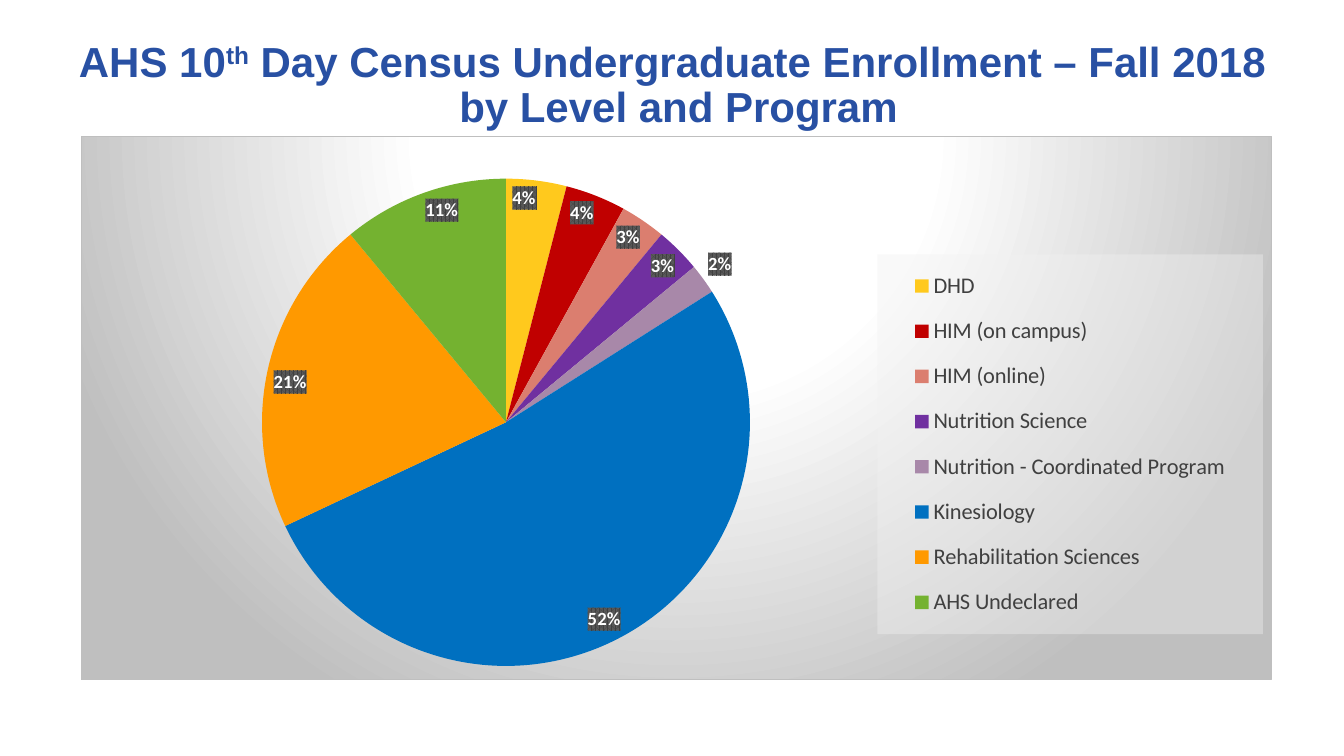
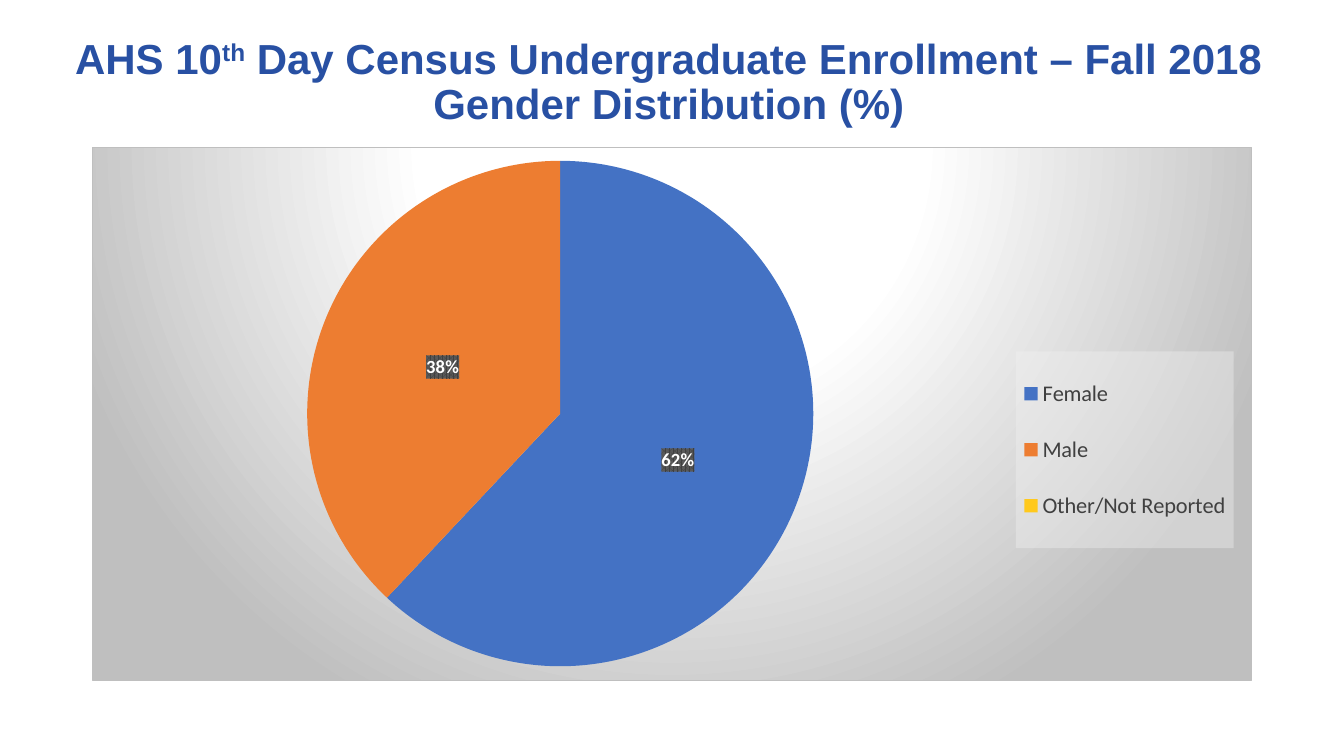
from dataclasses import dataclass

from pptx import Presentation
from pptx.chart.chart import Chart
from pptx.chart.data import CategoryChartData
from pptx.dml.color import RGBColor
from pptx.enum.chart import XL_CHART_TYPE, XL_LABEL_POSITION, XL_LEGEND_POSITION
from pptx.enum.text import MSO_ANCHOR, MSO_AUTO_SIZE, PP_ALIGN
from pptx.oxml import parse_xml
from pptx.oxml.ns import nsdecls
from pptx.slide import Slide
from pptx.util import Inches, Pt

SLIDE_WIDTH = Inches(13.33)
SLIDE_HEIGHT = Inches(7.5)
COLUMNS, ROWS = 16, 9


@dataclass(frozen=True)
class Theme:
    """Colours, fonts and type sizes shared by the slides."""

    title_colour: str = "2850A3"
    legend_colour: str = "404040"
    legend_back: str = "F2F2F2"
    label_colour: str = "FFFFFF"
    label_dark: str = "404040"
    label_light: str = "595959"
    panel_light: str = "FFFFFF"
    panel_dark: str = "BFBFBF"
    title_font: str = "Arial"
    chart_font: str = "Calibri"
    title_size: float = 30
    chart_size: float = 10
    legend_size: float = 16
    label_size: float = 13.3


THEME = Theme()


@dataclass(frozen=True)
class Area:
    """A rectangle in grid units of the slide or in percent of a chart."""

    left: float
    top: float
    width: float
    height: float

    def on_slide(self) -> tuple[int, int, int, int]:
        """Return the rectangle in slide lengths, read as columns and rows."""
        column, row = SLIDE_WIDTH / COLUMNS, SLIDE_HEIGHT / ROWS
        return (round(self.left * column), round(self.top * row),
                round(self.width * column), round(self.height * row))


@dataclass(frozen=True)
class Slice:
    """One group of students in a pie."""

    name: str
    percent: int
    colour: str
    outside: bool = False


@dataclass(frozen=True)
class Census:
    """One census slide: its heading, pie and placement."""

    heading: str
    subject: str
    title_area: Area
    panel_area: Area
    pie_area: Area
    legend_area: Area
    slices: tuple[Slice, ...]
    label_position: XL_LABEL_POSITION


HEADING = " Day Census Undergraduate Enrollment – Fall 2018"

CENSUSES = (
    Census(
        HEADING + " ", "by Level and Program",
        Area(0.78, 0.52, 14.6, 1.02), Area(0.96, 1.62, 14.18, 6.48),
        Area(15.2, 7.6, 41, 90), Area(66.9, 21.7, 32.4, 69.9),
        (
            Slice("DHD", 4, "FFC91D"),
            Slice("HIM (on campus)", 4, "C00000"),
            Slice("HIM (online)", 3, "DB7E6F"),
            Slice("Nutrition Science", 3, "7030A0"),
            Slice("Nutrition - Coordinated Program", 2, "A888A9", outside=True),
            Slice("Kinesiology", 52, "0070C0"),
            Slice("Rehabilitation Sciences", 21, "FF9900"),
            Slice("AHS Undeclared", 11, "74B230"),
        ),
        XL_LABEL_POSITION.INSIDE_END,
    ),
    Census(
        HEADING, "Gender Distribution (%)",
        Area(0.68, 0.48, 14.57, 1.02), Area(1.1, 1.75, 13.8, 6.36),
        Area(18.35, 2.5, 44, 94.8), Area(79.7, 38.25, 18.8, 36.9),
        (
            Slice("Female", 62, "4472C4"),
            Slice("Male", 38, "ED7D31"),
            Slice("Other/Not Reported", 0, "FFC91D"),
        ),
        XL_LABEL_POSITION.CENTER,
    ),
)


def format_font(font, *, size: float, colour: str = "000000",
                family: str = THEME.chart_font, bold: bool = False) -> None:
    """Set the size, colour, family and weight of a font."""
    font.size, font.name, font.bold = Pt(size), family, bold
    font.color.rgb = RGBColor.from_string(colour)


def add_text(paragraph, text: str, *, superscript: bool = False, **style) -> None:
    """Append formatted text to a paragraph."""
    run = paragraph.add_run()
    run.text = text
    format_font(run.font, **style)
    if superscript:
        run._r.get_or_add_rPr().set("baseline", "30000")


def add_title(slide: Slide, census: Census) -> None:
    """Place and write the two-line title."""
    title = slide.shapes.title
    title.left, title.top, title.width, title.height = census.title_area.on_slide()
    frame = title.text_frame
    frame.word_wrap = True
    frame.auto_size = MSO_AUTO_SIZE.NONE
    frame.vertical_anchor = MSO_ANCHOR.MIDDLE
    paragraph = frame.paragraphs[0]
    paragraph.alignment = PP_ALIGN.CENTER
    paragraph.line_spacing = 0.9
    style = dict(size=THEME.title_size, colour=THEME.title_colour,
                 family=THEME.title_font, bold=True)
    add_text(paragraph, "AHS 10", **style)
    add_text(paragraph, "th", superscript=True, **style)
    add_text(paragraph, census.heading, **style)
    paragraph.add_line_break()
    add_text(paragraph, census.subject, **style)


def shape_properties(content: str):
    """Build chart shape properties around fill and line markup."""
    return parse_xml(f'<c:spPr {nsdecls("c", "a")}>{content}</c:spPr>')


def solid(colour: str, alpha: int = 100) -> str:
    """Return solid fill markup with an opacity in percent."""
    return (f'<a:solidFill><a:srgbClr val="{colour}">'
            f'<a:alpha val="{alpha * 1000}"/></a:srgbClr></a:solidFill>')


def manual_layout(area: Area, target: str = ""):
    """Build a layout that fixes a chart part at percentages of the chart."""
    modes = '<c:xMode val="edge"/><c:yMode val="edge"/>'
    return parse_xml(
        f'<c:layout {nsdecls("c")}><c:manualLayout>{target}{modes}'
        f'<c:x val="{area.left / 100}"/><c:y val="{area.top / 100}"/>'
        f'<c:w val="{area.width / 100}"/><c:h val="{area.height / 100}"/>'
        '</c:manualLayout></c:layout>')


def paint_panel(chart: Chart) -> None:
    """Give the chart its radial grey backdrop and border."""
    stops = ((0, THEME.panel_light), (39, THEME.panel_light), (100, THEME.panel_dark))
    marks = "".join(f'<a:gs pos="{share * 1000}"><a:srgbClr val="{colour}"/></a:gs>'
                    for share, colour in stops)
    backdrop = shape_properties(
        f'<a:gradFill rotWithShape="1"><a:gsLst>{marks}</a:gsLst><a:path path="circle">'
        '<a:fillToRect l="50000" t="-80000" r="50000" b="180000"/></a:path></a:gradFill>'
        f'<a:ln w="9525">{solid(THEME.panel_dark)}</a:ln>')
    chart.element.xpath("./c:chart")[0].addnext(backdrop)


def place_parts(chart: Chart, census: Census) -> None:
    """Fix the pie and the translucent legend in place."""
    for layout in chart.element.xpath(".//c:plotArea/c:layout | .//c:legend/c:layout"):
        layout.getparent().remove(layout)
    inner = '<c:layoutTarget val="inner"/>'
    plot_area = chart.element.xpath(".//c:plotArea")[0]
    plot_area.insert(0, manual_layout(census.pie_area, inner))
    position = chart.element.xpath(".//c:legend/c:legendPos")[0]
    position.addnext(manual_layout(census.legend_area))
    overlay = chart.element.xpath(".//c:legend/c:overlay")[0]
    overlay.addnext(shape_properties(solid(THEME.legend_back, 39)))


def label_slices(chart: Chart, census: Census) -> None:
    """Colour the slices and label them with percentages."""
    series = chart.plots[0].series[0]
    style = dict(size=THEME.label_size, colour=THEME.label_colour, bold=True)
    labels = series.data_labels
    labels.show_value, labels.show_percentage = False, True
    labels.number_format, labels.number_format_is_linked = "0%", False
    labels.position = census.label_position
    format_font(labels.font, **style)
    for index, group in enumerate(census.slices):
        point = series.points[index]
        point.format.fill.solid()
        point.format.fill.fore_color.rgb = RGBColor.from_string(group.colour)
        point.format.line.fill.background()
        if group.outside:
            format_font(point.data_label.font, **style)
            point.data_label.position = XL_LABEL_POSITION.OUTSIDE_END
    for tag, shown in (("showVal", "0"), ("showPercent", "1")):
        for flag in chart.element.xpath(f".//c:dLbl/c:{tag}"):
            flag.set("val", shown)
    for text in chart.element.xpath(".//c:dLbls//c:txPr"):
        text.addprevious(shape_properties(
            '<a:pattFill prst="pct75">'
            f'<a:fgClr><a:srgbClr val="{THEME.label_dark}"/></a:fgClr>'
            f'<a:bgClr><a:srgbClr val="{THEME.label_light}"/></a:bgClr></a:pattFill>'))


def add_pie(slide: Slide, census: Census) -> None:
    """Draw the enrollment pie with its legend."""
    enrollment = CategoryChartData()
    enrollment.categories = [group.name for group in census.slices]
    enrollment.add_series("Series 1", [group.percent for group in census.slices])
    chart = slide.shapes.add_chart(
        XL_CHART_TYPE.PIE, *census.panel_area.on_slide(), enrollment).chart
    chart.has_title = False
    chart.plots[0].vary_by_categories = True
    format_font(chart.font, size=THEME.chart_size)
    chart.has_legend = True
    chart.legend.position = XL_LEGEND_POSITION.RIGHT
    chart.legend.include_in_layout = False
    format_font(chart.legend.font, size=THEME.legend_size, colour=THEME.legend_colour)
    paint_panel(chart)
    place_parts(chart, census)
    label_slices(chart, census)


def main() -> None:
    """Build and save the census slides."""
    deck = Presentation()
    deck.slide_width, deck.slide_height = SLIDE_WIDTH, SLIDE_HEIGHT
    title_only = deck.slide_layouts.get_by_name("Title Only")
    for census in CENSUSES:
        slide = deck.slides.add_slide(title_only)
        add_title(slide, census)
        add_pie(slide, census)
    deck.save("out.pptx")


if __name__ == "__main__":
    main()
